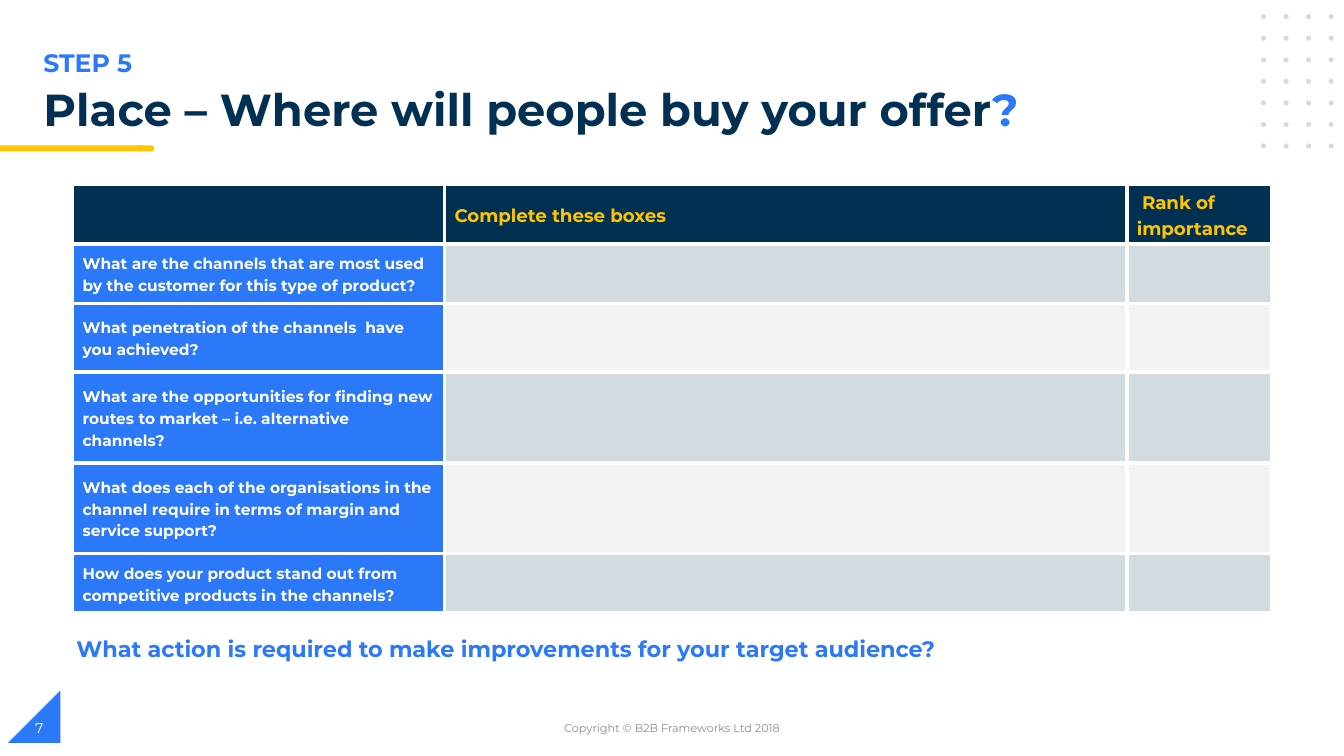
from lxml import etree
from pptx import Presentation
from pptx.dml.color import RGBColor
from pptx.enum import shapes, text
from pptx.oxml import ns
from pptx.util import Pt

FONT = "Montserrat"
INK = {"blue": "2B79F8", "navy": "023053", "gold": "FFC600", "mist": "D1DBE0",
       "pale": "F2F2F2", "white": "FFFFFF", "gray": "888C97"}
KIND = shapes.MSO_SHAPE


def style(run, size, ink, bold=False):
    run.font.name = FONT
    run.font.size = Pt(size)
    run.font.bold = bold
    run.font.color.rgb = RGBColor.from_string(INK[ink])


def draw(kind, left, top, width, height, ink):
    shape = slide.shapes.add_shape(kind, Pt(left), Pt(top), Pt(width), Pt(height))
    shape.shadow.inherit = False
    shape.fill.solid()
    shape.fill.fore_color.rgb = RGBColor.from_string(INK[ink])
    shape.line.fill.background()
    return shape


deck = Presentation()
deck.slide_width, deck.slide_height = Pt(960), Pt(540)
slide = deck.slides.add_slide(deck.slide_layouts[5])

corner = draw(KIND.RIGHT_TRIANGLE, 5.8, 493.2, 37.4, 37.4, "blue")
corner.rotation = 270
draw(KIND.FLOWCHART_TERMINATOR, 96.5, 103.9, 13.7, 4.3, "gold")
draw(KIND.RECTANGLE, 0, 103.9, 101.5, 4.3, "gold")

for row in range(7):
    for col in range(4):
        draw(KIND.OVAL, 900.7 + 16.1 * col, 10.1 + 15.4 * row, 3.6, 3.6, "mist")

title = slide.shapes.title
title.left, title.top, title.width, title.height = Pt(23.8), Pt(59), Pt(745), Pt(40.3)
frame = title.text_frame
frame.auto_size = text.MSO_AUTO_SIZE.NONE
frame.vertical_anchor = text.MSO_ANCHOR.TOP
para = frame.paragraphs[0]
para.alignment = text.PP_ALIGN.LEFT
para.line_spacing = 0.9
for words, ink in [("Place – Where will people buy your offer", "navy"), ("?", "blue")]:
    run = para.add_run()
    run.text = words
    style(run, 32, ink, True)

TOP, MID = text.MSO_ANCHOR.TOP, text.MSO_ANCHOR.MIDDLE
LEFT, CENTER = text.PP_ALIGN.LEFT, text.PP_ALIGN.CENTER
notes = [
    ("STEP 5", 23.8, 30.2, 481.7, 28.8, 18, "blue", True, TOP, LEFT),
    ("Copyright © B2B Frameworks Ltd 2018", 318.2, 505.4, 324, 28.8, 8, "gray", False, MID, CENTER),
    ("7", 18, 505.4, 216, 28.8, 10, "white", False, MID, LEFT),
    ("What action is required to make improvements for your target audience?",
     47.5, 450, 658, 26.6, 16, "blue", True, TOP, LEFT),
]
for words, left, top, width, height, size, ink, bold, anchor, align in notes:
    box = slide.shapes.add_textbox(Pt(left), Pt(top), Pt(width), Pt(height))
    frame = box.text_frame
    frame.word_wrap = True
    frame.vertical_anchor = anchor
    frame.text = words
    frame.paragraphs[0].alignment = align
    style(frame.paragraphs[0].runs[0], size, ink, bold)

heads = ["", "Complete these boxes", "\u00a0Rank of importance".replace("\u00a0", " ")]
asks = [
    "What are the channels that are most used by the customer for this type of product?",
    "What penetration of the channels  have you achieved?",
    "What are the opportunities for finding new routes to market – i.e. alternative channels?",
    "What does each of the organisations in the channel require in terms of margin and service support?",
    "How does your product stand out from competitive products in the channels?",
]
rows = [heads] + [[ask, "", ""] for ask in asks]
widths = [265.7, 487.4, 103.7]
heights = [42.5, 42.5, 49, 64.8, 64.8, 42.5]
grid = slide.shapes.add_table(len(rows), len(widths), Pt(51.8), Pt(131.8),
                              Pt(sum(widths)), Pt(sum(heights))).table
for col, width in zip(grid.columns, widths):
    col.width = Pt(width)
for row, height in zip(grid.rows, heights):
    row.height = Pt(height)

for r, row in enumerate(rows):
    for c, words in enumerate(row):
        cell = grid.cell(r, c)
        cell.margin_left = cell.margin_right = Pt(7.2)
        cell.margin_top = cell.margin_bottom = Pt(0)
        cell.vertical_anchor = MID
        props = cell._tc.get_or_add_tcPr()
        for side in ("a:lnL", "a:lnR", "a:lnT", "a:lnB"):
            edge = etree.SubElement(props, ns.qn(side), w=str(Pt(3)))
            fill = etree.SubElement(edge, ns.qn("a:solidFill"))
            etree.SubElement(fill, ns.qn("a:srgbClr"), val=INK["white"])
        if r == 0:
            shade = "navy"
        elif c == 0:
            shade = "blue"
        else:
            shade = "mist" if r % 2 else "pale"
        cell.fill.solid()
        cell.fill.fore_color.rgb = RGBColor.from_string(INK[shade])
        if words:
            cell.text_frame.text = words
            para = cell.text_frame.paragraphs[0]
            para.line_spacing = 1.15
            style(para.runs[0], 11 if r else 13, "white" if r else "gold", True)

deck.save("out.pptx")
